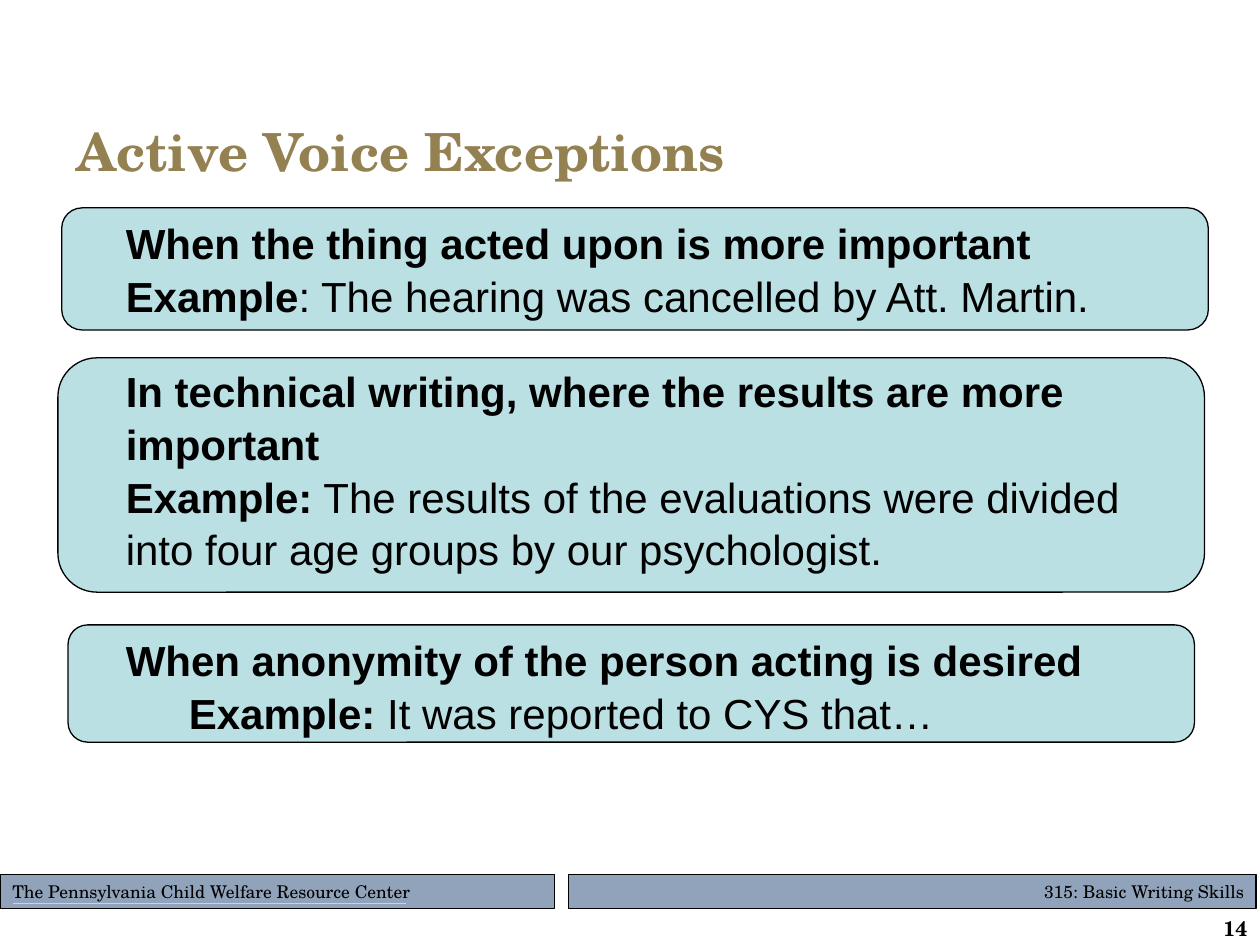
from pptx import Presentation
from pptx import util as u
from pptx.dml.color import RGBColor
from pptx.enum import shapes, text
from lxml import etree

Pt = u.Pt
BLACK = RGBColor(0x00, 0x00, 0x00)
GOLD = RGBColor(0x94, 0x81, 0x51)
PALE_GOLD = RGBColor(0xE5, 0xD1, 0x99)
SLATE = RGBColor(0x91, 0xA3, 0xBB)
AQUA = RGBColor(0xBB, 0xE0, 0xE3)
SERIF = "TeX Gyre Schola"
SANS = "Arial"
LEFT, RIGHT = text.PP_ALIGN.LEFT, text.PP_ALIGN.RIGHT
TOP, MIDDLE = text.MSO_ANCHOR.TOP, text.MSO_ANCHOR.MIDDLE
TEXT_LEFT = 64.8
DRAWING_NS = "http://schemas.openxmlformats.org/drawingml/2006/main"


class SlideBuilder:
    def __init__(self, prs):
        self.s = prs.slides.add_slide(prs.slide_layouts[5])

    def font(self, p, name, size, color=BLACK, bold=None):
        p.font.name = name
        p.font.size = Pt(size)
        p.font.color.rgb = color
        p.font.bold = bold

    def frame(self, sp, anchor):
        tf = sp.text_frame
        tf.word_wrap = True
        tf.auto_size = text.MSO_AUTO_SIZE.NONE
        tf.vertical_anchor = anchor
        return tf

    def label(self, sp, words, size, align, anchor=MIDDLE, color=BLACK, bold=False):
        tf = self.frame(sp, anchor)
        tf.text = words
        p = tf.paragraphs[0]
        p.alignment = align
        self.font(p, SERIF, size, color, bold)

    def title(self, words, x, y, w, h):
        sp = self.s.shapes.title
        sp.left, sp.top, sp.width, sp.height = map(Pt, (x, y, w, h))
        self.label(sp, words, 30, LEFT, color=GOLD, bold=True)

    def panel(self, kind, x, y, w, h, fill, weight=0.75):
        sp = self.s.shapes.add_shape(kind, *map(Pt, (x, y, w, h)))
        sp.shadow.inherit = False
        sp.fill.solid()
        sp.fill.fore_color.rgb = fill
        sp.line.color.rgb = BLACK
        sp.line.width = Pt(weight)
        return sp

    def footer(self, words, x, w, align, weight):
        sp = self.panel(shapes.MSO_SHAPE.RECTANGLE, x, 499.7, w, 19.4, SLATE, weight)
        self.label(sp, words, 10, align)

    def rule(self, x1, x2, y):
        line = self.s.shapes.add_connector(
            shapes.MSO_CONNECTOR.STRAIGHT, Pt(x1), Pt(y), Pt(x2), Pt(y))
        line.line.color.rgb = PALE_GOLD
        line.line.width = Pt(0.75)
        etree.SubElement(line._element.spPr, f"{{{DRAWING_NS}}}effectLst")

    def page_number(self, words, x, y, w, h):
        sp = self.s.shapes.add_textbox(*map(Pt, (x, y, w, h)))
        self.label(sp, words, 12, RIGHT, TOP, bold=True)

    def exception(self, box, text_top, text_width, heading, lead, example, indent=0):
        self.panel(shapes.MSO_SHAPE.ROUNDED_RECTANGLE, *box, AQUA)
        sp = self.s.shapes.add_textbox(
            Pt(TEXT_LEFT), Pt(text_top), Pt(text_width), Pt(box[3]))
        tf = self.frame(sp, TOP)
        tf.text = heading
        p = tf.add_paragraph()
        for words, bold in ((lead, True), (example, False)):
            r = p.add_run()
            r.text = words
            r.font.bold = bold
        if indent:
            p.level = 1
            pPr = p._p.get_or_add_pPr()
            pPr.set("marL", str(Pt(indent)))
            pPr.set("indent", "0")
        for p, bold in zip(tf.paragraphs, (True, None)):
            p.line_spacing = 1.05
            self.font(p, SANS, 24, bold=bold)


def main():
    prs = Presentation()
    prs.slide_width, prs.slide_height = Pt(720), Pt(540)
    b = SlideBuilder(prs)
    b.footer("315: Basic Writing Skills", 324.7, 393.1, RIGHT, 0.75)
    b.footer("The Pennsylvania Child Welfare Resource Center", 0, 316.8, LEFT, 0.5)
    b.rule(7.2, 231.8, 516.2)
    b.title("Active Voice Exceptions", 36.7, 62.6, 648, 46.8)
    b.page_number("14", 640, 519.8, 80, 18.7)
    b.exception((35.3, 118.8, 655.2, 69.8), 119.5, 599.8,
                "When the thing acted upon is more important",
                "Example", ": The hearing was cancelled by Att. Martin.")
    b.exception((33.1, 204.5, 655.2, 133.9), 203.8, 617.8,
                "In technical writing, where the results are more important",
                "Example:", " The results of the evaluations were divided into "
                "four age groups by our psychologist.")
    b.exception((38.9, 357.1, 643.7, 67), 357.8, 639.4,
                "When anonymity of the person acting is desired",
                "Example:", " It was reported to CYS that…", indent=36)
    prs.save("out.pptx")


if __name__ == "__main__":
    main()
